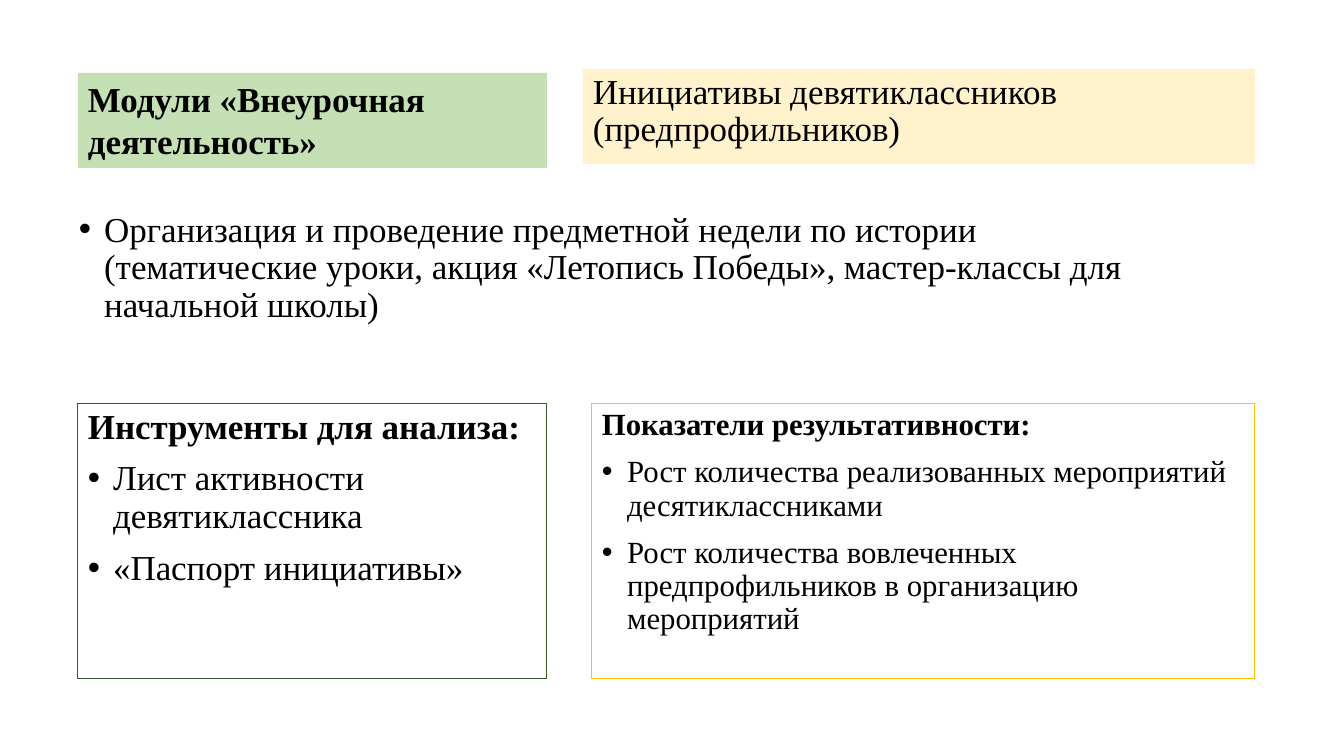
from pptx import Presentation
from pptx import util as u
from pptx.dml.color import RGBColor
from pptx.enum import shapes, text
from pptx.oxml.ns import qn
from lxml import etree

SCALE = 914400 / 100.8  # EMU in one px


def px(n):
    return u.Emu(round(n * SCALE))


def color(code):
    return RGBColor.from_string(code)


class Board:
    """Holds the style and the current slide."""
    face = "Times New Roman"
    ink = "000000"
    indent = u.Inches(0.25)

    def __init__(self, deck):
        self.slide = deck.slides.add_slide(deck.slide_layouts[6])

    def box(self, area, fill=None, line=None):
        """Rectangle with an optional fill and outline."""
        rect = self.slide.shapes.add_shape(
            shapes.MSO_SHAPE.RECTANGLE, *map(px, area))
        rect.shadow.inherit = False
        if fill:
            rect.fill.solid()
            rect.fill.fore_color.rgb = color(fill)
        else:
            rect.fill.background()
        if line:
            rect.line.color.rgb = color(line)
            rect.line.width = u.Pt(0.75)
        else:
            rect.line.fill.background()
        return rect

    def label(self, area):
        """Plain text box."""
        return self.slide.shapes.add_textbox(*map(px, area))

    def words(self, shape, size, head=None, items=(), bold=True, tight=0.9):
        """Heading line, then bulleted items."""
        frame = shape.text_frame
        frame.word_wrap = True
        frame.vertical_anchor = text.MSO_ANCHOR.TOP
        rows = [(head, bold, False)] if head else []
        rows += [(item, False, True) for item in items]
        for i, (line, heavy, dot) in enumerate(rows):
            para = frame.add_paragraph() if i else frame.paragraphs[0]
            form = {"alignment": text.PP_ALIGN.LEFT, "line_spacing": tight,
                    "space_before": u.Pt(10 if i else 0)}
            for key, val in form.items():
                setattr(para, key, val)
            if dot:
                self.bullet(para)
            run = para.add_run()
            run.text = line
            style = {"name": self.face, "size": u.Pt(size), "bold": heavy}
            for key, val in style.items():
                setattr(run.font, key, val)
            run.font.color.rgb = color(self.ink)

    def bullet(self, para):
        """Round bullet with a hanging indent."""
        props = para._p.get_or_add_pPr()
        props.set("marL", str(self.indent))
        props.set("indent", str(-self.indent))
        font = etree.SubElement(props, qn("a:buFont"))
        font.set("typeface", "Arial")
        mark = etree.SubElement(props, qn("a:buChar"))
        mark.set("char", "•")


def main():
    deck = Presentation()
    deck.slide_width, deck.slide_height = px(1344), px(756)
    board = Board(deck)

    # Header band
    board.words(board.box((583, 69, 672, 95), fill="FFF2CC"), 25,
                "Инициативы девятиклассников (предпрофильников)", bold=False)
    board.words(board.box((78, 73, 469, 95), fill="C5E0B4"), 25,
                "Модули «Внеурочная деятельность»", tight=1.0)

    # Lower panels
    board.words(board.box((78, 404, 469, 275), line="385723"), 25,
                "Инструменты для анализа:",
                ["Лист активности девятиклассника", "«Паспорт инициативы»"])
    board.words(board.box((592, 404, 663, 275), line="FFC000"), 22,
                "Показатели результативности:",
                ["Рост количества реализованных мероприятий десятиклассниками",
                 "Рост количества вовлеченных предпрофильников "
                 "в организацию мероприятий"])

    # Main statement
    board.words(board.label((69, 207, 1128, 190)), 25, items=[
        "Организация и проведение предметной недели по истории "
        "(тематические уроки, акция «Летопись Победы», "
        "мастер-классы для начальной школы)"])

    deck.save("out.pptx")


if __name__ == "__main__":
    main()
